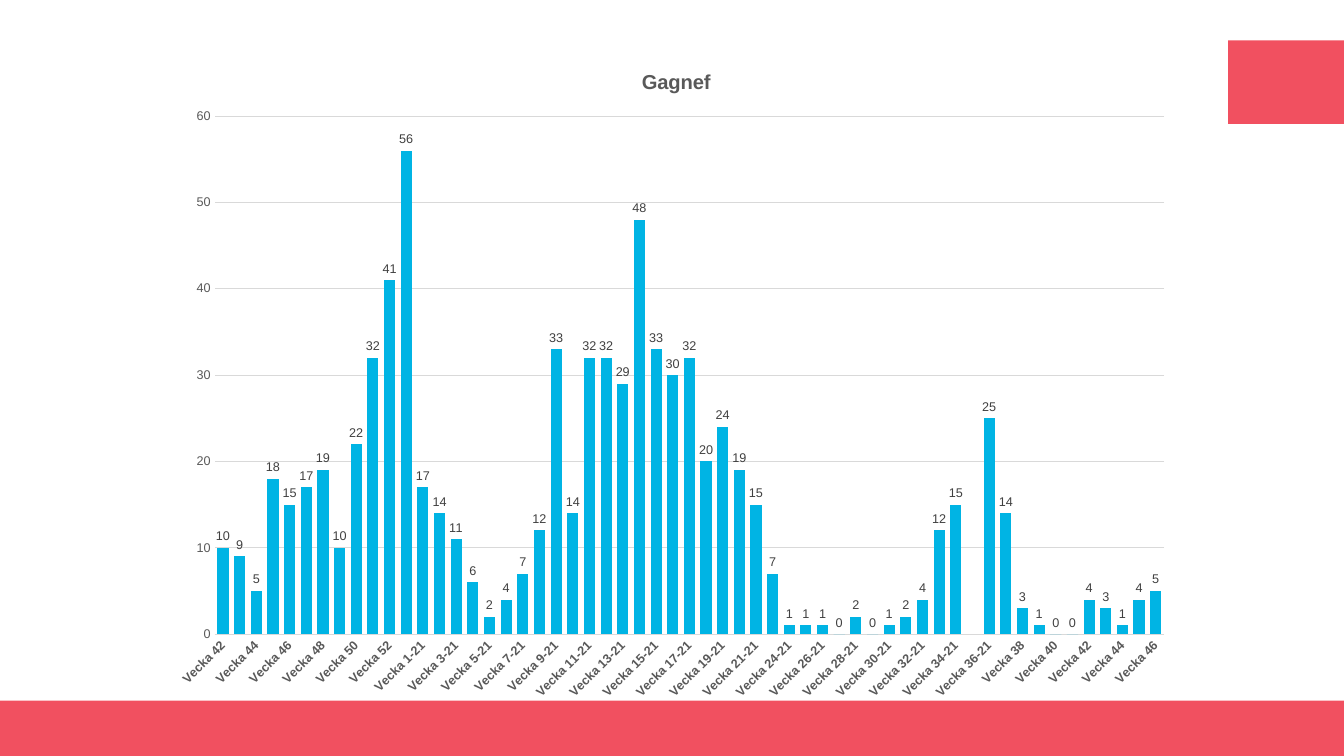
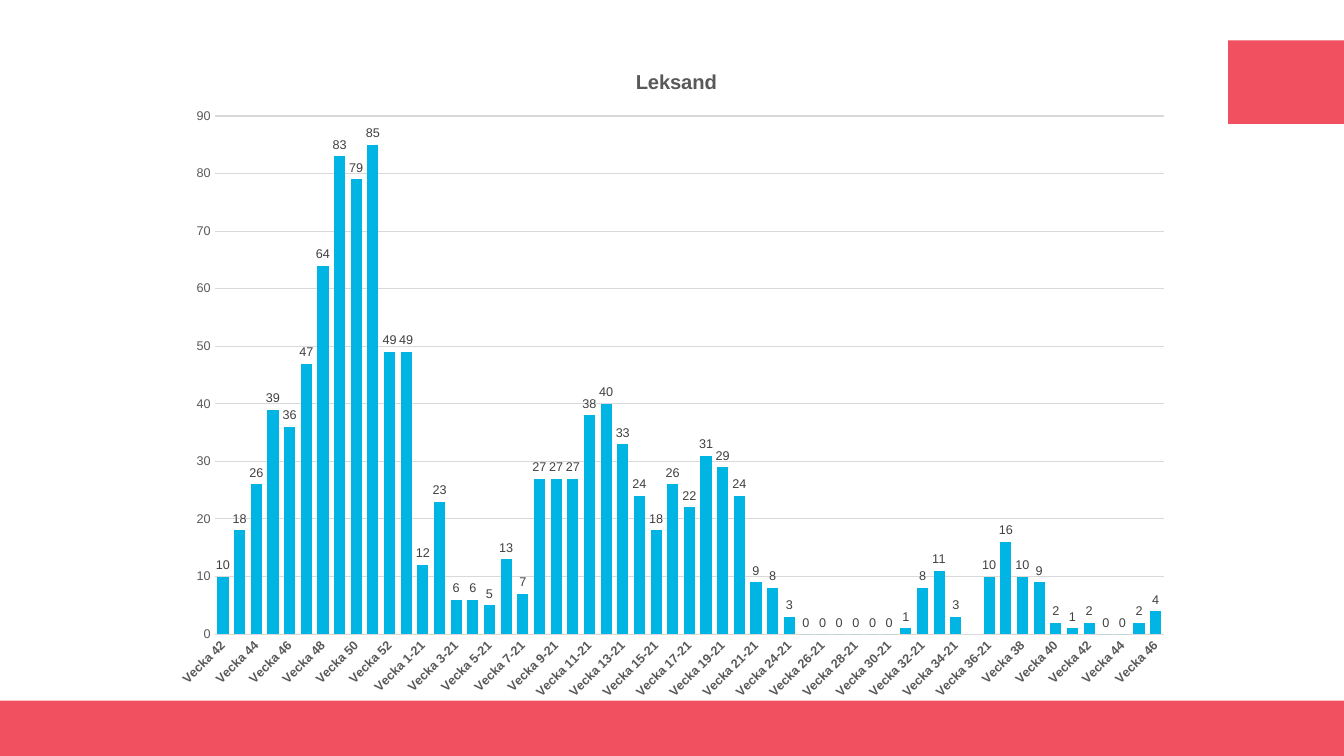
"""Weekly case charts for two municipalities in a shared slide style."""
import dataclasses

import lxml.etree
import pptx
import pptx.chart.data
import pptx.dml.color
import pptx.enum.chart
import pptx.enum.shapes
import pptx.oxml.ns
import pptx.util

Inches = pptx.util.Inches
Pt = pptx.util.Pt
qn = pptx.oxml.ns.qn


@dataclasses.dataclass(frozen=True)
class Theme:
    font: str = "Arial"
    band: str = "F15060"
    bar: str = "00B4E4"
    grid: str = "D9D9D9"
    axis_text: str = "595959"
    label_text: str = "404040"
    title_size: float = 14.4
    base_size: float = 10
    small_size: float = 9


class Report:
    chart_left, chart_top, chart_width, chart_height = 1.58, 0.42, 10.18, 6.65

    def __init__(self, theme):
        self.theme = theme
        self.deck = pptx.Presentation()
        self.deck.slide_width = Inches(13.33)
        self.deck.slide_height = Inches(7.5)
        self.page = None

    def color(self, value):
        return pptx.dml.color.RGBColor.from_string(value)

    def style_font(self, font, size, color, bold=False):
        font.name = self.theme.font
        font.size = Pt(size)
        font.bold = bold
        font.color.rgb = self.color(color)

    def style_line(self, line):
        line.color.rgb = self.color(self.theme.grid)
        line.width = Pt(0.75)

    def add_page(self):
        self.page = self.deck.slides.add_slide(self.deck.slide_layouts[6])
        self.add_band(0, 6.95, 13.33, 0.55)
        self.add_band(12.18, 0.4, 1.15, 0.83)

    def add_band(self, left, top, width, height):
        band = self.page.shapes.add_shape(
            pptx.enum.shapes.MSO_SHAPE.RECTANGLE,
            Inches(left), Inches(top), Inches(width), Inches(height))
        band.shadow.inherit = False
        band.fill.solid()
        band.fill.fore_color.rgb = self.color(self.theme.band)
        band.line.fill.background()

    def place(self, element, index, settings):
        layout = element.find(qn("c:layout"))
        if layout is not None:
            element.remove(layout)
        layout = lxml.etree.Element(qn("c:layout"))
        element.insert(index, layout)
        manual = lxml.etree.SubElement(layout, qn("c:manualLayout"))
        for tag, value in settings.items():
            lxml.etree.SubElement(manual, qn(f"c:{tag}")).set("val", str(value))

    def add_column_chart(self, title, title_width, weeks, cases, maximum):
        theme = self.theme
        data = pptx.chart.data.CategoryChartData()
        data.categories = weeks
        data.add_series("Series 1", cases)
        chart = self.page.shapes.add_chart(
            pptx.enum.chart.XL_CHART_TYPE.COLUMN_CLUSTERED,
            Inches(self.chart_left), Inches(self.chart_top),
            Inches(self.chart_width), Inches(self.chart_height), data).chart
        self.style_font(chart.font, theme.base_size, "000000")
        chart.has_legend = False
        self.style_title(chart, title, title_width)
        self.style_axes(chart, maximum)
        self.style_bars(chart.plots[0])
        self.place(chart.plots[0]._element.getparent(), 0, {
            "layoutTarget": "inner", "xMode": "edge", "yMode": "edge",
            "x": 0.054, "y": 0.11, "w": 0.925, "h": 0.773})

    def style_title(self, chart, title, width):
        chart.has_title = True
        frame = chart.chart_title.text_frame
        frame.text = title
        self.style_font(frame.paragraphs[0].runs[0].font,
                        self.theme.title_size, self.theme.axis_text, True)
        chart.chart_title.include_in_layout = False
        left = (1 - width / self.chart_width) / 2
        self.place(chart.chart_title._element, 1, {
            "xMode": "edge", "yMode": "edge", "x": left, "y": 0.035})

    def style_axes(self, chart, maximum):
        theme = self.theme
        for axis in (chart.category_axis, chart.value_axis):
            axis.major_tick_mark = pptx.enum.chart.XL_TICK_MARK.NONE
            self.style_font(axis.tick_labels.font, theme.small_size,
                            theme.axis_text, axis is chart.category_axis)
        weeks, counts = chart.category_axis, chart.value_axis
        for axis in (weeks, counts):
            axis.minor_tick_mark = pptx.enum.chart.XL_TICK_MARK.NONE
        self.style_font(weeks.tick_labels.font, theme.small_size, theme.axis_text, True)
        self.style_line(weeks.format.line)
        weeks._element.find(qn("c:txPr")).find(qn("a:bodyPr")).set("rot", "-2700000")
        counts.minimum_scale, counts.maximum_scale = 0, maximum
        counts.major_unit = 10
        counts.format.line.fill.background()
        counts.has_major_gridlines = True
        self.style_line(counts.major_gridlines.format.line)

    def style_bars(self, plot):
        plot.gap_width = 50
        plot.overlap = -27
        plot.vary_by_categories = False
        fill = plot.series[0].format.fill
        fill.solid()
        fill.fore_color.rgb = self.color(self.theme.bar)
        plot.has_data_labels = True
        labels = plot.data_labels
        labels.show_value = True
        labels.position = pptx.enum.chart.XL_LABEL_POSITION.OUTSIDE_END
        self.style_font(labels.font, self.theme.small_size, self.theme.label_text)


WEEKS = ([f"Vecka {week}" for week in range(42, 54)]
         + [f"Vecka {week}-21" for week in range(1, 37) if week != 23]
         + [f"Vecka {week}" for week in range(37, 47)])

MUNICIPALITIES = [
    ("Gagnef", 0.68, 60, [
        10, 9, 5, 18, 15, 17, 19, 10, 22, 32, 41, 56, 17, 14, 11, 6, 2, 4, 7,
        12, 33, 14, 32, 32, 29, 48, 33, 30, 32, 20, 24, 19, 15, 7, 1, 1, 1, 0,
        2, 0, 1, 2, 4, 12, 15, None, 25, 14, 3, 1, 0, 0, 4, 3, 1, 4, 5]),
    ("Leksand", 0.8, 90, [
        10, 18, 26, 39, 36, 47, 64, 83, 79, 85, 49, 49, 12, 23, 6, 6, 5, 13, 7,
        27, 27, 27, 38, 40, 33, 24, 18, 26, 22, 31, 29, 24, 9, 8, 3, 0, 0, 0,
        0, 0, 0, 1, 8, 11, 3, None, 10, 16, 10, 9, 2, 1, 2, 0, 0, 2, 4]),
]


def main():
    report = Report(Theme())
    for name, title_width, maximum, cases in MUNICIPALITIES:
        report.add_page()
        report.add_column_chart(name, title_width, WEEKS, cases, maximum)
    report.deck.save("out.pptx")


if __name__ == "__main__":
    main()
